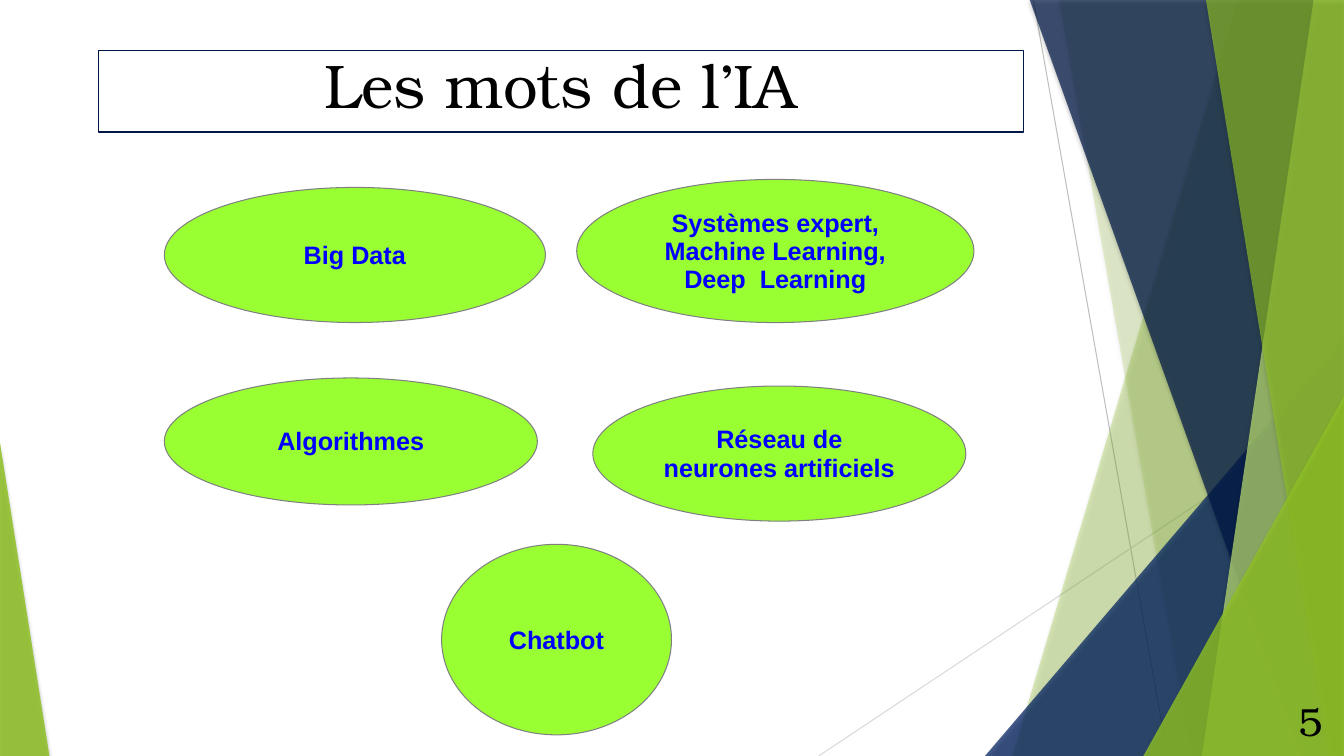
from lxml import etree
from pptx import Presentation
from pptx.dml.color import RGBColor
from pptx.enum.shapes import MSO_CONNECTOR, MSO_SHAPE
from pptx.enum.text import MSO_ANCHOR, PP_ALIGN
from pptx.oxml.ns import qn
from pptx.util import Inches, Pt

WHITE = RGBColor(0xFF, 0xFF, 0xFF)
BLACK = RGBColor(0x00, 0x00, 0x00)
BLUE = RGBColor(0x00, 0x00, 0xFF)
LIME = RGBColor(0x99, 0xFF, 0x33)
GREEN = RGBColor(0x90, 0xC2, 0x26)
PALE_GREEN = RGBColor(0xC0, 0xE4, 0x74)
NAVY = RGBColor(0x00, 0x20, 0x60)
DARK_NAVY = RGBColor(0x00, 0x18, 0x48)
GREY = RGBColor(0x80, 0x80, 0x80)
MID_GREY = RGBColor(0xBF, 0xBF, 0xBF)
LIGHT_GREY = RGBColor(0xD9, 0xD9, 0xD9)

WIDTH, HEIGHT, BAND_TOP = 13.33, 7.5, -0.01
SERIF = {"name": "TeX Gyre Bonum"}
WORD_FONT = {"name": "Arial", "size": Pt(18), "bold": True}

RAYS = [
    ((10.25, 0), (11.58, HEIGHT), MID_GREY),
    ((WIDTH, 4.03), (8.12, HEIGHT), LIGHT_GREY),
]
BACK_BANDS = [(12.28, 10.04, GREEN, 30), (10.5, 11.82, GREEN, 20)]
FRONT_BANDS = [
    (10.21, 12.91, DARK_NAVY, 70),
    (13.03, 11.92, PALE_GREEN, 70),
    (11.96, 13.18, GREEN, 65),
]
BACK_TRIANGLE = (9.77, 3.33, 3.56, 4.17), 1, NAVY, 72
FRONT_TRIANGLES = [
    ((11.34, 3.93, 1.99, 3.57), 1, GREEN, 80),
    ((0, 4.39, 0.49, 3.11), 0, GREEN, 85),
]
WORDS = [
    ((1.63, 3.75, 3.7, 1.26), ["Algorithmes"]),
    ((4.38, 5.4, 2.28, 1.89), ["Chatbot"]),
    ((5.88, 3.83, 3.7, 1.34), ["Réseau de neurones artificiels"]),
    ((1.63, 1.86, 3.78, 1.34), ["Big Data"]),
    ((5.72, 1.78, 3.94, 1.42),
     ["Systèmes expert,", "Machine Learning,", "Deep  Learning"]),
]


def inches(values):
    return [Inches(value) for value in values]


def set_alpha(color, percent):
    etree.SubElement(color, qn("a:alpha"), val=str(percent * 1000))


def style_facet(shape, color, opacity):
    shape.fill.solid()
    shape.fill.fore_color.rgb = color
    properties = shape._element.spPr
    set_alpha(properties.find(qn("a:solidFill"))[0], opacity)
    shape.line.fill.background()
    shape.shadow.inherit = False
    shadow = etree.SubElement(
        properties.find(qn("a:effectLst")), qn("a:outerShdw"),
        blurRad=str(Pt(3)), dist=str(Pt(2)), dir=str(90 * 60000), rotWithShape="0")
    set_alpha(etree.SubElement(shadow, qn("a:srgbClr"), val=str(BLACK)), 35)


def add_ray(slide, start, end, color):
    ray = slide.shapes.add_connector(MSO_CONNECTOR.STRAIGHT, *inches(start + end))
    ray.line.color.rgb = color
    ray.line.width = Pt(0.75)
    etree.SubElement(ray._element.spPr, qn("a:effectLst"))


def add_band(slide, top_left, bottom_left, color, opacity):
    builder = slide.shapes.build_freeform(*inches((top_left, BAND_TOP)))
    corners = [(WIDTH, BAND_TOP), (WIDTH, HEIGHT), (bottom_left, HEIGHT)]
    builder.add_line_segments([inches(corner) for corner in corners])
    style_facet(builder.convert_to_shape(), color, opacity)


def add_triangle(slide, box, apex, color, opacity):
    triangle = slide.shapes.add_shape(MSO_SHAPE.ISOSCELES_TRIANGLE, *inches(box))
    triangle.adjustments[0] = apex
    style_facet(triangle, color, opacity)


def write_text(shape, lines, font, color, align, anchor, spacing=1.0, top=0.05):
    frame = shape.text_frame
    settings = {"word_wrap": True, "vertical_anchor": anchor, "margin_top": Inches(top),
                "margin_bottom": Inches(0.05), "margin_left": Inches(0.1),
                "margin_right": Inches(0.1)}
    for name, value in settings.items():
        setattr(frame, name, value)
    for index, line in enumerate(lines):
        paragraph = frame.add_paragraph() if index else frame.paragraphs[0]
        paragraph.alignment = align
        paragraph.line_spacing = spacing
        run = paragraph.add_run()
        run.text = line
        for name, value in font.items():
            setattr(run.font, name, value)
        run.font.color.rgb = color


def add_outlined(slide, kind, box, fill, line, width):
    shape = slide.shapes.add_shape(kind, *inches(box))
    shape.shadow.inherit = False
    shape.fill.solid()
    shape.fill.fore_color.rgb = fill
    shape.line.color.rgb = line
    shape.line.width = Pt(width)
    return shape


def add_title(slide, text):
    title = add_outlined(slide, MSO_SHAPE.RECTANGLE, (0.98, 0.5, 9.17, 0.81),
                         WHITE, DARK_NAVY, 0)
    write_text(title, [text], SERIF | {"size": Pt(44)}, BLACK,
               PP_ALIGN.CENTER, MSO_ANCHOR.TOP, 0.9)


def add_word(slide, box, lines):
    ellipse = add_outlined(slide, MSO_SHAPE.OVAL, box, LIME, GREY, 0.75)
    write_text(ellipse, lines, WORD_FONT, BLUE,
               PP_ALIGN.CENTER, MSO_ANCHOR.MIDDLE, 0.93, 0.07)


def add_page_number(slide, number):
    box = slide.shapes.add_textbox(*inches((11.99, 6.92, 1.23, 0.46)))
    write_text(box, [number], SERIF | {"size": Pt(28)}, BLACK,
               PP_ALIGN.RIGHT, MSO_ANCHOR.MIDDLE)


def add_backdrop(slide):
    for ray in RAYS:
        add_ray(slide, *ray)
    for band in BACK_BANDS:
        add_band(slide, *band)
    add_triangle(slide, *BACK_TRIANGLE)
    for band in FRONT_BANDS:
        add_band(slide, *band)
    for triangle in FRONT_TRIANGLES:
        add_triangle(slide, *triangle)


def main():
    presentation = Presentation()
    presentation.slide_width = Inches(WIDTH)
    presentation.slide_height = Inches(HEIGHT)
    slide = presentation.slides.add_slide(presentation.slide_layouts[6])
    add_backdrop(slide)
    add_title(slide, "Les mots de l’IA")
    for box, lines in WORDS:
        add_word(slide, box, lines)
    add_page_number(slide, "5")
    presentation.save("out.pptx")


if __name__ == "__main__":
    main()
